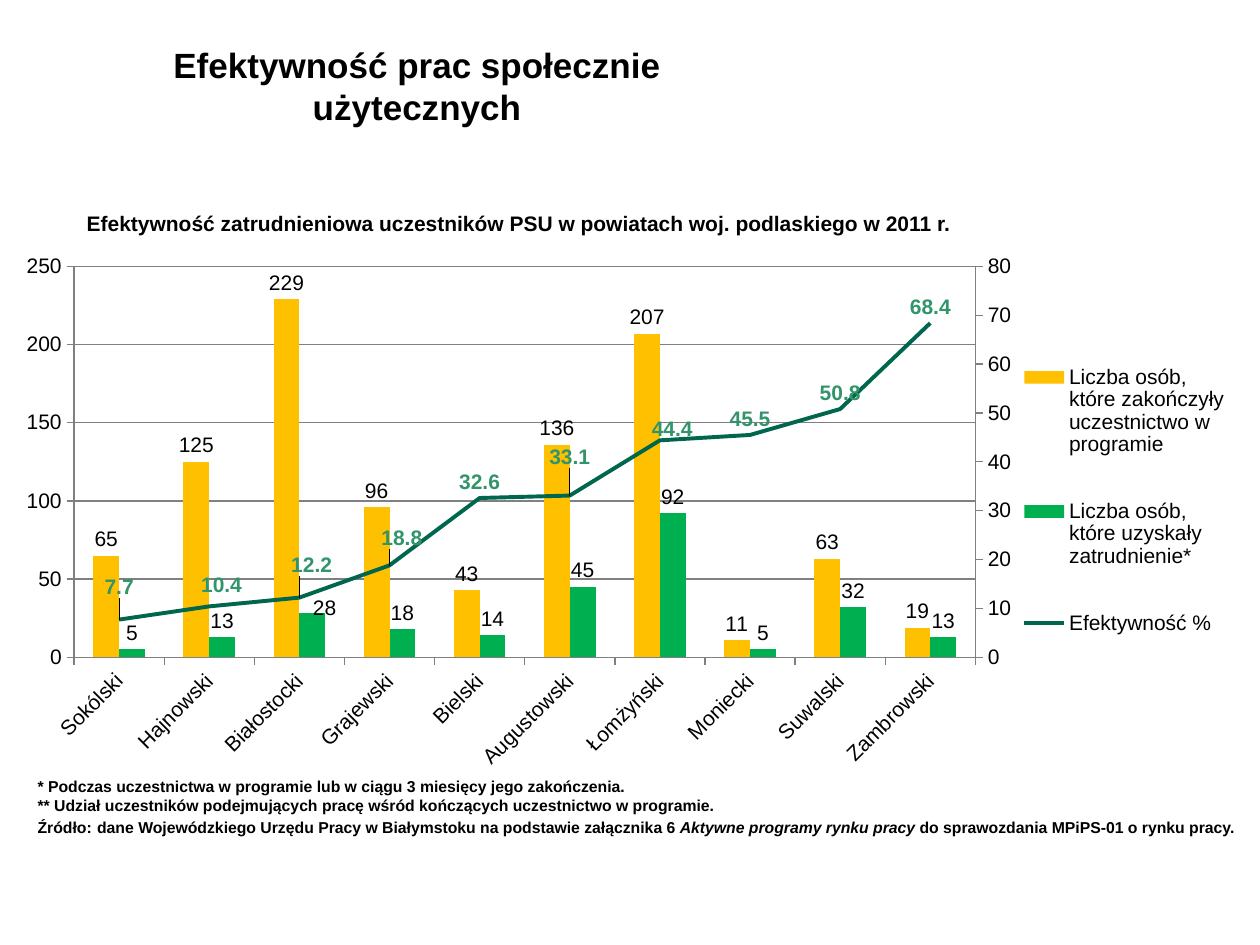
from copy import deepcopy
from dataclasses import dataclass

from pptx import Presentation
from pptx.chart.axis import CategoryAxis, ValueAxis
from pptx.chart.chart import Chart
from pptx.chart.data import CategoryChartData
from pptx.dml.color import RGBColor
from pptx.enum.chart import XL_CHART_TYPE, XL_LABEL_POSITION, XL_LEGEND_POSITION, XL_TICK_MARK
from pptx.enum.text import MSO_ANCHOR, PP_ALIGN
from pptx.oxml import parse_xml
from pptx.oxml.ns import nsdecls
from pptx.util import Pt

BLACK = RGBColor(0x00, 0x00, 0x00)
GRAY = RGBColor(0x80, 0x80, 0x80)
AMBER = RGBColor(0xFF, 0xC0, 0x00)
GREEN = RGBColor(0x00, 0xB0, 0x50)
DARK_GREEN = RGBColor(0x00, 0x66, 0x4D)
LABEL_GREEN = RGBColor(0x32, 0x94, 0x6A)
FONT = "Arial"

COUNTIES = ["Sokólski", "Hajnowski", "Białostocki", "Grajewski", "Bielski",
            "Augustowski", "Łomżyński", "Moniecki", "Suwalski", "Zambrowski"]


@dataclass
class Measure:
    name: str
    values: list[float]
    color: RGBColor
    label_color: RGBColor
    label_bold: bool
    label_position: XL_LABEL_POSITION
    label_shifts: dict[int, tuple[float, float]]


MEASURES = [
    Measure("Liczba osób, które zakończyły uczestnictwo w programie",
            [65, 125, 229, 96, 43, 136, 207, 11, 63, 19],
            AMBER, BLACK, False, XL_LABEL_POSITION.OUTSIDE_END, {}),
    Measure("Liczba osób, które uzyskały zatrudnienie*",
            [5, 13, 28, 18, 14, 45, 92, 5, 32, 13],
            GREEN, BLACK, False, XL_LABEL_POSITION.OUTSIDE_END, {2: (0.01, 0.02)}),
    Measure("Efektywność %",
            [7.7, 10.4, 12.2, 18.8, 32.6, 33.1, 44.4, 45.5, 50.8, 68.4],
            DARK_GREEN, LABEL_GREEN, True, XL_LABEL_POSITION.ABOVE,
            {0: (0, -0.03), 1: (0.01, -0.01), 2: (0.01, -0.03),
             3: (0.01, -0.02), 5: (0, -0.04), 6: (0.01, 0.01)}),
]


@dataclass
class Piece:
    text: str
    size: float = 9
    italic: bool = False


FOOTNOTES = [
    [Piece("* Podczas uczestnictwa w programie lub w ciągu 3 miesięcy jego zakończenia.")],
    [Piece("** Udział uczestników podejmujących pracę wśród kończących uczestnictwo w programie.")],
    [Piece("Źródło:"), Piece(" ", size=11),
     Piece("dane Wojewódzkiego Urzędu Pracy w Białymstoku na podstawie załącznika 6 "),
     Piece("Aktywne programy rynku pracy", italic=True),
     Piece(" do sprawozdania MPiPS-01 o rynku pracy.")],
]


def format_font(font, size: float, bold: bool = False, color: RGBColor = BLACK) -> None:
    font.name, font.size, font.bold = FONT, Pt(size), bold
    font.color.rgb = color


def manual_layout(x: float, y: float, width: float, height: float, inner: bool = False):
    target = '<c:layoutTarget val="inner"/>' if inner else ""
    return parse_xml(
        f'<c:layout {nsdecls("c")}><c:manualLayout>{target}'
        '<c:xMode val="edge"/><c:yMode val="edge"/>'
        f'<c:x val="{x}"/><c:y val="{y}"/><c:w val="{width}"/><c:h val="{height}"/>'
        '</c:manualLayout></c:layout>')


def label_layout(x: float, y: float):
    return parse_xml(
        f'<c:layout {nsdecls("c")}><c:manualLayout>'
        f'<c:x val="{x}"/><c:y val="{y}"/></c:manualLayout></c:layout>')


def format_axes(chart: Chart) -> None:
    for axis in (chart.category_axis, chart.value_axis):
        axis.major_tick_mark = XL_TICK_MARK.OUTSIDE
        axis.minor_tick_mark = XL_TICK_MARK.NONE
        axis.format.line.color.rgb = GRAY
        format_font(axis.tick_labels.font, 12)
    value_axis = chart.value_axis
    value_axis.minimum_scale, value_axis.maximum_scale, value_axis.major_unit = 0, 250, 50
    value_axis.major_gridlines.format.line.color.rgb = GRAY
    chart.element.xpath("//c:catAx/c:txPr/a:bodyPr")[0].set("rot", "-2700000")


def move_last_series_to_line(chart: Chart) -> None:
    """Turn the last bar series into a line measured on a second axis."""
    bar_chart = chart.element.xpath("//c:barChart")[0]
    series = bar_chart.xpath("c:ser")[-1]
    for element in series.xpath("c:invertIfNegative"):
        series.remove(element)
    line_chart = parse_xml(
        f'<c:lineChart {nsdecls("c")}><c:grouping val="standard"/><c:varyColors val="0"/>'
        '<c:marker val="1"/><c:axId val="5001"/><c:axId val="5002"/></c:lineChart>')
    line_chart.insert(2, series)
    bar_chart.addnext(line_chart)

    category = chart.element.xpath("//c:catAx")[0]
    value = chart.element.xpath("//c:valAx")[0]
    second_category, second_value = deepcopy(category), deepcopy(value)
    value.addnext(second_category)
    second_category.addnext(second_value)
    for axis, own_id, cross_id in ((second_category, "5001", "5002"),
                                   (second_value, "5002", "5001")):
        axis.xpath("c:axId")[0].set("val", own_id)
        axis.xpath("c:crossAx")[0].set("val", cross_id)
    second_value.xpath("c:axPos")[0].set("val", "r")
    second_value.xpath("c:crosses")[0].set("val", "max")
    CategoryAxis(second_category).visible = False
    right_axis = ValueAxis(second_value)
    right_axis.has_major_gridlines = False
    right_axis.maximum_scale, right_axis.major_unit = 80, 10


def format_series(chart: Chart, index: int, series, measure: Measure) -> None:
    labels = series.data_labels
    labels.show_value = True
    labels.position = measure.label_position
    format_font(labels.font, 12, measure.label_bold, measure.label_color)
    for point, shift in measure.label_shifts.items():
        label = series.points[point].data_label
        label.position = measure.label_position
        format_font(label.font, 12, measure.label_bold, measure.label_color)
        element = chart.element.xpath(
            f'//c:ser[c:idx/@val="{index}"]/c:dLbls/c:dLbl[c:idx/@val="{point}"]')[0]
        element.insert(1, label_layout(*shift))


def add_effectiveness_chart(slide) -> None:
    data = CategoryChartData()
    data.categories = COUNTIES
    for measure in MEASURES:
        data.add_series(measure.name, measure.values)
    chart = slide.shapes.add_chart(XL_CHART_TYPE.COLUMN_CLUSTERED, Pt(0), Pt(139.7),
                                   Pt(705.6), Pt(314.6), data).chart
    chart.has_title = False
    format_font(chart.font, 12)
    format_axes(chart)
    move_last_series_to_line(chart)

    bars, lines = chart.plots
    bars.gap_width, bars.overlap = 150, 0
    bars.vary_by_categories = False
    all_series = [*bars.series, *lines.series]
    for index, (series, measure) in enumerate(zip(all_series, MEASURES)):
        format_series(chart, index, series, measure)
    for series, measure in zip(bars.series, MEASURES):
        series.format.fill.solid()
        series.format.fill.fore_color.rgb = measure.color
    line_series = lines.series[0]
    line_series.smooth = False
    line_series.format.line.color.rgb = DARK_GREEN
    line_series.format.line.width = Pt(2.25)
    line_series.marker.style = None
    line_series.marker.format.fill.background()
    marker = chart.element.xpath("//c:lineChart/c:ser/c:marker")[0]
    for element in list(marker):
        marker.remove(element)
    marker.append(parse_xml(f'<c:symbol {nsdecls("c")} val="none"/>'))

    chart.has_legend = True
    chart.legend.position = XL_LEGEND_POSITION.RIGHT
    chart.legend.include_in_layout = False
    format_font(chart.legend.font, 12)
    for element in chart.element.xpath("//c:plotArea/c:layout | //c:legend/c:layout"):
        element.getparent().remove(element)
    plot_area = chart.element.xpath("//c:plotArea")[0]
    plot_area.insert(0, manual_layout(0.06, 0.04, 0.73, 0.71, inner=True))
    legend_position = chart.element.xpath("//c:legend/c:legendPos")[0]
    legend_position.addnext(manual_layout(0.83, 0.14, 0.17, 0.65))


def add_heading(slide) -> None:
    title = slide.shapes.title
    title.left, title.top, title.width, title.height = Pt(54), Pt(26), Pt(368.6), Pt(46)
    title.text_frame.text = "Efektywność prac społecznie użytecznych"
    title.text_frame.word_wrap = True
    title.text_frame.vertical_anchor = MSO_ANCHOR.MIDDLE
    paragraph = title.text_frame.paragraphs[0]
    paragraph.alignment = PP_ALIGN.CENTER
    format_font(paragraph.runs[0].font, 20, bold=True)


def add_chart_caption(slide) -> None:
    frame = slide.shapes.add_textbox(Pt(42.5), Pt(116.6), Pt(615), Pt(21.8)).text_frame
    frame.word_wrap = True
    frame.text = "Efektywność zatrudnieniowa uczestników PSU w powiatach woj. podlaskiego w 2011 r."
    format_font(frame.paragraphs[0].runs[0].font, 12, bold=True)


def add_footnotes(slide) -> None:
    frame = slide.shapes.add_textbox(Pt(14.4), Pt(440), Pt(705.6), Pt(42.5)).text_frame
    frame.word_wrap = False
    frame.vertical_anchor = MSO_ANCHOR.MIDDLE
    for index, pieces in enumerate(FOOTNOTES):
        paragraph = frame.add_paragraph() if index else frame.paragraphs[0]
        for piece in pieces:
            run = paragraph.add_run()
            run.text = piece.text
            format_font(run.font, piece.size, bold=True)
            run.font.italic = piece.italic


def main() -> None:
    presentation = Presentation()
    presentation.slide_width, presentation.slide_height = Pt(720), Pt(540)
    slide = presentation.slides.add_slide(presentation.slide_layouts[5])
    add_footnotes(slide)
    add_effectiveness_chart(slide)
    add_chart_caption(slide)
    add_heading(slide)
    presentation.save("out.pptx")


if __name__ == "__main__":
    main()
